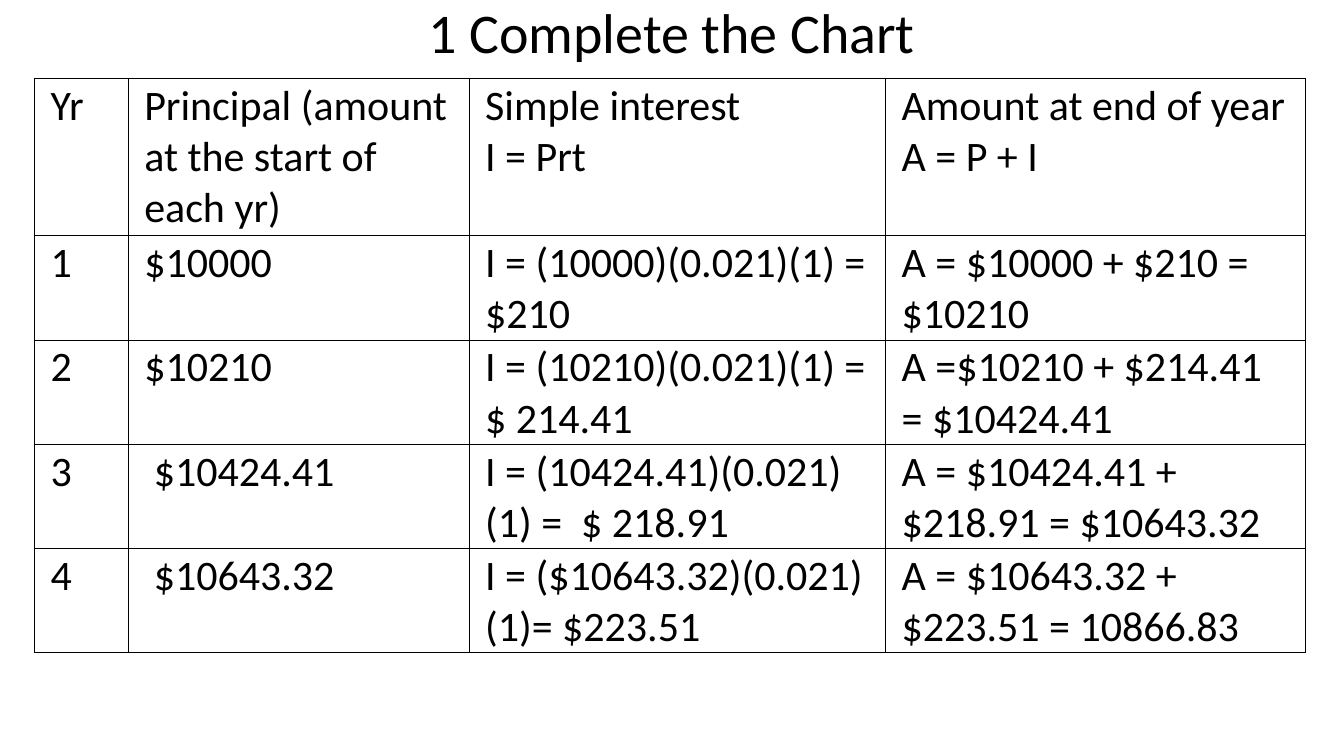
from dataclasses import dataclass

from lxml import etree
from pptx import Presentation
from pptx.dml.color import RGBColor
from pptx.enum.text import MSO_ANCHOR, PP_ALIGN
from pptx.oxml.ns import qn
from pptx.util import Pt

CENTER = PP_ALIGN.CENTER
LEFT = PP_ALIGN.LEFT
TOP = MSO_ANCHOR.TOP
MIDDLE = MSO_ANCHOR.MIDDLE
TITLE_ONLY = 5


@dataclass(frozen=True)
class Theme:
    font: str = "Calibri"
    ink: str = "000000"
    title_size: int = 40
    cell_size: int = 30
    border_width: int = 1


THEME = Theme()

COLUMN_WIDTHS = (67, 243.5, 297.5, 300)
HEADER_HEIGHT = 112.3
YEAR_HEIGHT = 73.5

INTEREST_ROWS = (
    ("Yr", "Principal (amount at the start of each yr)",
     "Simple interest\nI = Prt", "Amount at end of year\nA = P + I"),
    ("1", "$10000",
     "I = (10000)(0.021)(1) = $210", "A = $10000 + $210 = $10210"),
    ("2", "$10210",
     "I = (10210)(0.021)(1) = $ 214.41", "A =$10210 + $214.41 = $10424.41"),
    ("3", " $10424.41",
     "I = (10424.41)(0.021)(1) =  $ 218.91",
     "A = $10424.41 + $218.91 = $10643.32"),
    ("4", " $10643.32",
     "I = ($10643.32)(0.021)(1)= $223.51",
     "A = $10643.32 + $223.51 = 10866.83"),
)


def style_paragraph(paragraph, size, alignment):
    paragraph.alignment = alignment
    paragraph.font.name = THEME.font
    paragraph.font.size = Pt(size)
    paragraph.font.bold = False
    paragraph.font.color.rgb = RGBColor.from_string(THEME.ink)


def set_title(slide, text):
    title = slide.shapes.title
    title.left, title.top = Pt(79), Pt(-18.5)
    title.width, title.height = Pt(801.5), Pt(88)
    frame = title.text_frame
    frame.text = text
    frame.word_wrap = True
    frame.vertical_anchor = MIDDLE
    paragraph = frame.paragraphs[0]
    paragraph.line_spacing = 0.9
    style_paragraph(paragraph, THEME.title_size, CENTER)


def add_borders(cell):
    properties = cell._tc.get_or_add_tcPr()
    # Border lines come before the fill in the cell properties
    for position, side in enumerate(("lnL", "lnR", "lnT", "lnB")):
        line = etree.Element(qn(f"a:{side}"), w=str(Pt(THEME.border_width)))
        fill = etree.SubElement(line, qn("a:solidFill"))
        etree.SubElement(fill, qn("a:srgbClr"), val=THEME.ink)
        properties.insert(position, line)


def fill_cell(cell, text):
    cell.fill.background()
    cell.vertical_anchor = TOP
    cell.margin_left = cell.margin_right = Pt(11.5)
    cell.margin_top, cell.margin_bottom = Pt(1.2), Pt(0)
    cell.text = text
    for paragraph in cell.text_frame.paragraphs:
        style_paragraph(paragraph, THEME.cell_size, LEFT)
    add_borders(cell)


def add_interest_table(slide):
    heights = [HEADER_HEIGHT] + [YEAR_HEIGHT] * (len(INTEREST_ROWS) - 1)
    shape = slide.shapes.add_table(
        len(heights), len(COLUMN_WIDTHS), Pt(24.6), Pt(56.2),
        Pt(sum(COLUMN_WIDTHS)), Pt(sum(heights)))
    table = shape.table
    table.first_row = table.horz_banding = False
    for column, width in zip(table.columns, COLUMN_WIDTHS):
        column.width = Pt(width)
    for row, height, texts in zip(table.rows, heights, INTEREST_ROWS):
        row.height = Pt(height)
        for cell, text in zip(row.cells, texts):
            fill_cell(cell, text)


def main():
    presentation = Presentation()
    presentation.slide_width, presentation.slide_height = Pt(960), Pt(540)
    slide = presentation.slides.add_slide(
        presentation.slide_layouts[TITLE_ONLY])

    # Heading
    set_title(slide, "1 Complete the Chart")

    # Yearly simple interest
    add_interest_table(slide)

    presentation.save("out.pptx")


if __name__ == "__main__":
    main()
